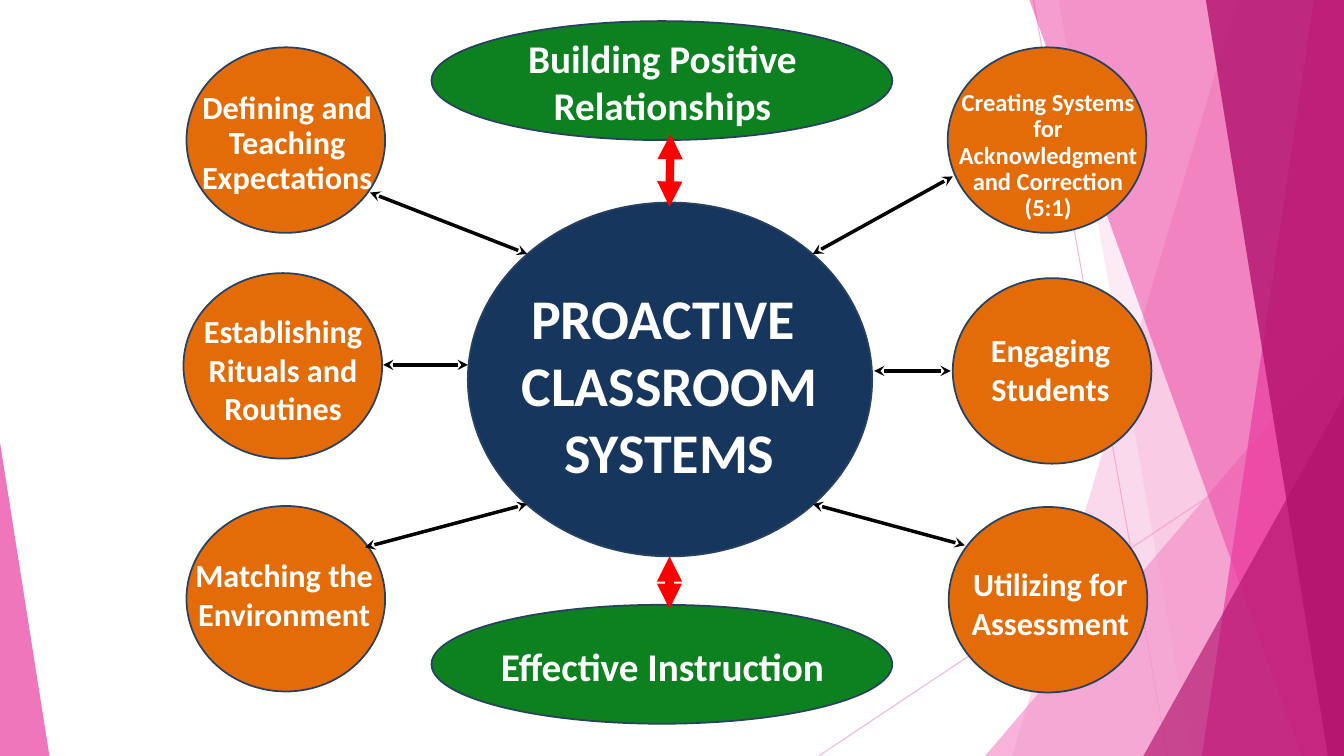
import dataclasses

import pptx
import pptx.dml.color
import pptx.enum.shapes
import pptx.enum.text
import pptx.oxml
import pptx.oxml.ns
import pptx.util
from lxml import etree

Inches = pptx.util.Inches
KIND = pptx.enum.shapes.MSO_SHAPE


@dataclasses.dataclass(frozen=True)
class Theme:
    font: str = "Calibri"
    white: str = "FFFFFF"
    black: str = "000000"
    red: str = "FF0000"
    navy: str = "17365D"
    rim: str = "284160"
    orange: str = "E36C09"
    green: str = "0D8120"
    pale: str = "F496CB"
    pink: str = "EB3D9F"
    plum: str = "B2136D"
    title: float = 40
    head: float = 28
    body: float = 23
    small: float = 17.5
    rim_width: float = 1.25


THEME = Theme()
WIDE, HIGH = 13.33, 7.5


def assign(target, values):
    for name, value in values.items():
        setattr(target, name, value)


def color(code):
    return pptx.dml.color.RGBColor.from_string(code)


def fade(shape, percent):
    for tint in shape._element.spPr.iter(pptx.oxml.ns.qn("a:srgbClr")):
        alpha = etree.SubElement(tint, pptx.oxml.ns.qn("a:alpha"))
        alpha.set("val", str(percent * 1000))


def paint(shape, fill, alpha=None):
    shape.shadow.inherit = False
    shape.fill.solid()
    shape.fill.fore_color.rgb = color(fill)
    if alpha:
        shape.line.fill.background()
        fade(shape, alpha)
    else:
        shape.line.color.rgb = color(THEME.rim)
        shape.line.width = pptx.util.Pt(THEME.rim_width)


def add_line(slide, start, end, ink, width, tip=None):
    line = slide.shapes.add_connector(
        pptx.enum.shapes.MSO_CONNECTOR.STRAIGHT,
        *(Inches(n) for n in (*start, *end)))
    line.line.color.rgb = color(ink)
    line.line.width = pptx.util.Pt(width)
    if tip:
        edge = line.line._get_or_add_ln()
        for name in ("a:headEnd", "a:tailEnd"):
            etree.SubElement(edge, pptx.oxml.ns.qn(name)).set("type", tip)
    etree.SubElement(line._element.spPr, pptx.oxml.ns.qn("a:effectLst"))
    return line


def add_oval(slide, box, fill):
    oval = slide.shapes.add_shape(KIND.OVAL, *(Inches(n) for n in box))
    paint(oval, fill)


def add_text(slide, box, text, size, space=None, anchor="MIDDLE"):
    frame = slide.shapes.add_textbox(*(Inches(n) for n in box)).text_frame
    assign(frame, {
        "word_wrap": True,
        "vertical_anchor": getattr(pptx.enum.text.MSO_ANCHOR, anchor),
        "margin_left": Inches(0.1), "margin_right": Inches(0.1),
        "margin_top": Inches(0.05), "margin_bottom": Inches(0.05),
        "text": text,
    })
    for para in frame.paragraphs:
        assign(para, {"alignment": pptx.enum.text.PP_ALIGN.CENTER,
                      "line_spacing": space})
        for run in para.runs:
            assign(run.font, {"name": THEME.font, "bold": True,
                              "size": pptx.util.Pt(size)})
            run.font.color.rgb = color(THEME.white)


def add_band(slide, top, foot, fill, alpha):
    points = [(Inches(x), Inches(y)) for x, y in
              ((top, 0), (WIDE, 0), (WIDE, HIGH), (foot, HIGH))]
    path = slide.shapes.build_freeform(*points[0], scale=1.0)
    path.add_line_segments(points[1:], close=True)
    paint(path.convert_to_shape(), fill, alpha)


def add_wedge(slide, box, apex, fill, alpha):
    wedge = slide.shapes.add_shape(
        KIND.ISOSCELES_TRIANGLE, *(Inches(n) for n in box))
    wedge.adjustments[0] = apex
    paint(wedge, fill, alpha)


def draw_back(slide):
    for start, end in (((10.25, 0), (11.58, HIGH)),
                       ((WIDE, 4.03), (8.12, HIGH))):
        fade(add_line(slide, start, end, THEME.pale, 0.75), 70)
    add_band(slide, 12.27, 10.04, THEME.pale, 36)
    add_band(slide, 10.5, 11.82, THEME.pale, 20)
    add_wedge(slide, (9.77, 3.33, 3.56, 4.17), 1, THEME.pale, 72)
    add_band(slide, 10.21, 12.91, THEME.pink, 50)
    add_band(slide, 13.03, 11.92, THEME.pink, 70)
    add_band(slide, 11.96, 13.17, THEME.plum, 80)
    add_wedge(slide, (11.34, 3.93, 1.99, 3.57), 1, THEME.plum, 66)
    add_wedge(slide, (0, 4.39, 0.49, 3.11), 0, THEME.pink, 70)


def draw_hub(slide, box):
    left, top, width, height = box
    add_oval(slide, box, THEME.navy)
    add_text(slide, (left + 0.25, top + 0.75, width - 0.51, height - 1.48),
             "PROACTIVE \vCLASSROOM\vSYSTEMS", THEME.title, anchor="TOP")


def draw_head(slide, box, text, drop):
    left, top, width, height = box
    add_oval(slide, box, THEME.green)
    add_text(slide, (left + 0.17, top + drop, width - 0.33, height - 0.21),
             text, THEME.head)


def draw_node(slide, box, inset, text, size, space=None):
    left, top = box[:2]
    shift, drop, width, height = inset
    add_oval(slide, box, THEME.orange)
    add_text(slide, (left + shift, top + drop, width, height),
             text, size, space)


def draw_links(slide):
    for start, end in (
        ((5.23, 2.52), (3.67, 1.91)),
        ((4.64, 3.62), (3.8, 3.62)),
        ((5.23, 5), (3.62, 5.43)),
        ((8.06, 2.52), (9.45, 1.75)),
        ((8.67, 3.68), (9.43, 3.68)),
        ((8.06, 5), (9.57, 5.41)),
    ):
        add_line(slide, start, end, THEME.black, 2.5, "stealth")
    for start, end in (((6.65, 1.33), (6.64, 2.05)),
                       ((6.64, 5.52), (6.64, 6.04))):
        add_line(slide, start, end, THEME.red, 6, "triangle")


def main():
    deck = pptx.Presentation()
    assign(deck, {"slide_width": Inches(WIDE), "slide_height": Inches(HIGH)})
    slide = deck.slides.add_slide(deck.slide_layouts[6])
    draw_back(slide)
    draw_hub(slide, (4.64, 2.01, 4.01, 3.51))
    for top, text, drop in ((0.21, "Building Positive Relationships", 0.11),
                            (6, "Effective Instruction", 0.12)):
        draw_head(slide, (4.28, top, 4.57, 1.18), text, drop)
    for left, top, inset, text, size, space in (
        (1.85, 0.47, (0, 0.34, 2, 1.24),
         "Defining and Teaching Expectations", THEME.body, 0.9),
        (1.82, 2.71, (-0.01, 0.29, 2, 1.33),
         "Establishing Rituals and Routines", THEME.body, None),
        (1.85, 5.02, (-0.03, 0.29, 2, 1.17),
         "Matching the Environment", THEME.body, None),
        (9.4, 0.47, (-0.1, 0.33, 2.19, 1.5),
         "Creating Systems for Acknowledgment and Correction\n(5:1)",
         THEME.small, 0.9),
        (9.45, 2.76, (-0.03, 0.24, 2, 1.33),
         "Engaging Students", THEME.body, None),
        (9.41, 5.03, (0.01, 0.25, 2, 1.41),
         "Utilizing for Assessment", THEME.body, None),
    ):
        draw_node(slide, (left, top, 1.97, 1.84), inset, text, size, space)
    draw_links(slide)
    deck.save("out.pptx")


if __name__ == "__main__":
    main()
